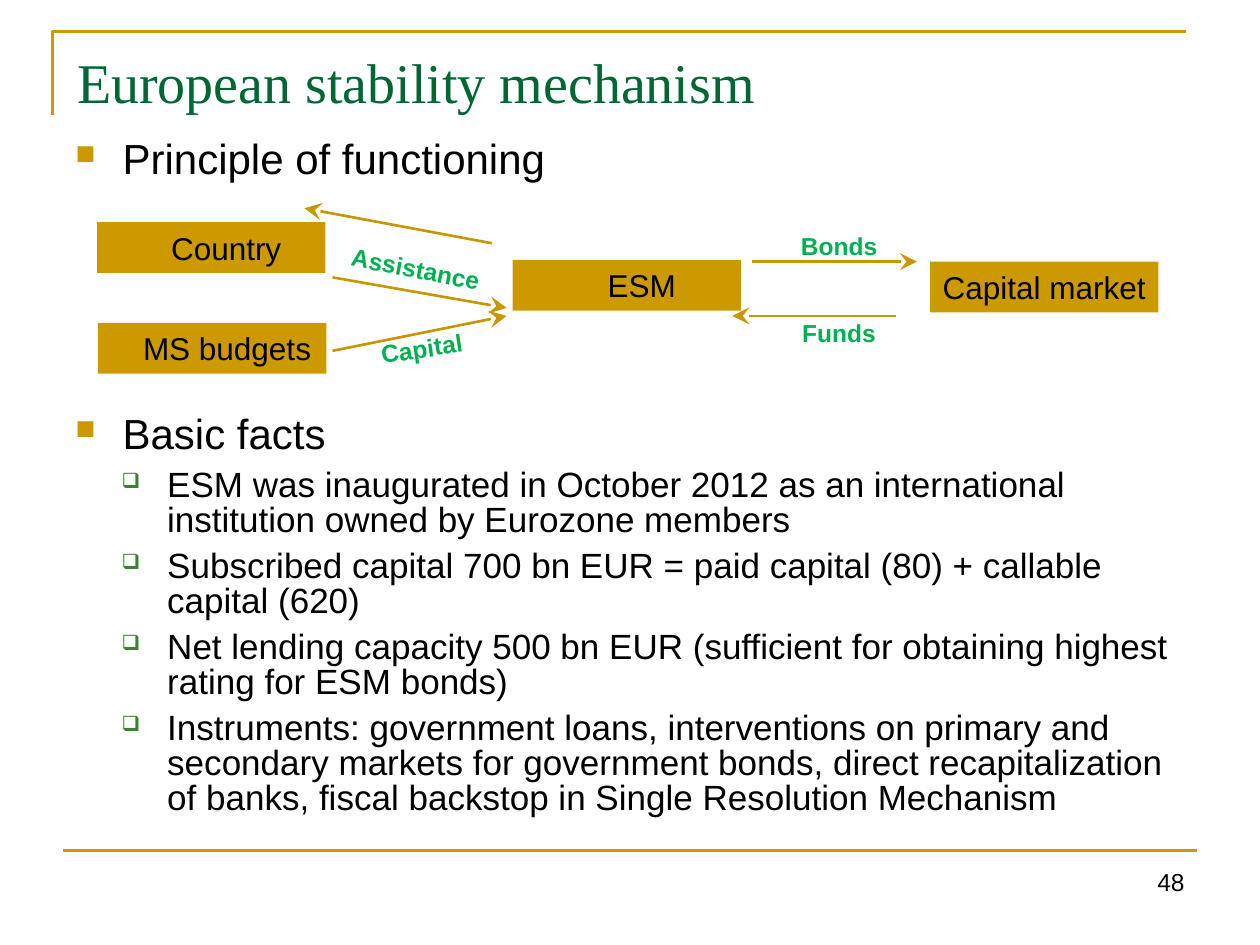
import pptx
import pptx.dml.color
import pptx.enum.shapes
import pptx.enum.text
import pptx.util
from lxml import etree
from pptx.oxml.ns import qn

Pt = pptx.util.Pt
ALIGN = pptx.enum.text.PP_ALIGN
ANCHOR = pptx.enum.text.MSO_ANCHOR
GOLD, ARROW_GOLD, LABEL_GREEN = "CC9900", "C89600", "00B050"
POINTS = (
    "ESM was inaugurated in October 2012 as an international institution owned by Eurozone members",
    "Subscribed capital 700 bn EUR = paid capital (80) + callable capital (620)",
    "Net lending capacity 500 bn EUR (sufficient for obtaining highest rating for ESM bonds)",
    "Instruments: government loans, interventions on primary and secondary markets for "
    "government bonds, direct recapitalization of banks, fiscal backstop in Single Resolution Mechanism",
)


def color(value):
    """Return the colour for a hex string."""
    return pptx.dml.color.RGBColor.from_string(value)


def write(paragraph, text, size, ink="000000", align=ALIGN.LEFT, face="Arial", bold=False):
    """Put formatted text into a paragraph."""
    paragraph.text = text
    paragraph.alignment = align
    font = paragraph.font
    font.name, font.size, font.bold = face, Pt(size), bold
    font.color.rgb = color(ink)


def add_text(slide, box, text, size, anchor=ANCHOR.TOP, **style):
    """Add a wrapped text box with one paragraph."""
    shape = slide.shapes.add_textbox(*map(Pt, box))
    shape.text_frame.word_wrap = True
    shape.text_frame.vertical_anchor = anchor
    write(shape.text_frame.paragraphs[0], text, size, **style)
    return shape


def add_line(slide, start, end, ink, arrow=False):
    """Add a straight line, with a stealth head at its end on request."""
    connector = slide.shapes.add_connector(
        pptx.enum.shapes.MSO_CONNECTOR.STRAIGHT, *map(Pt, (*start, *end)))
    connector.line.color.rgb = color(ink)
    connector.line.width = Pt(1.5)
    properties = connector._element.spPr
    if arrow:
        etree.SubElement(properties.find(qn("a:ln")), qn("a:tailEnd"), type="stealth", w="lg", len="lg")
    etree.SubElement(properties, qn("a:effectLst"))


def add_bullet(paragraph, left, hanging, character, ink, percent):
    """Give a paragraph a hanging bullet."""
    properties = paragraph._p.get_or_add_pPr()
    properties.set("marL", str(Pt(left)))
    properties.set("indent", str(-Pt(hanging)))
    holder = etree.Element(qn("a:buClr"))
    etree.SubElement(holder, qn("a:srgbClr"), val=ink)
    size = etree.Element(qn("a:buSzPct"), val=str(percent * 1000))
    mark = etree.Element(qn("a:buChar"), char=character)
    position = list(properties).index(properties.find(qn("a:defRPr")))
    for offset, element in enumerate((holder, size, mark)):
        properties.insert(position + offset, element)


def add_frame(slide, left, top, width, height):
    """Draw the corner rule, the footer rule and the slide number."""
    builder = slide.shapes.build_freeform(Pt(left), Pt(top + 48))
    builder.add_line_segments([(Pt(left), Pt(top)), (Pt(left + width), Pt(top))], close=False)
    corner = builder.convert_to_shape()
    corner.shadow.inherit = False
    corner.fill.background()
    corner.line.color.rgb = color(GOLD)
    corner.line.width = Pt(1.5)
    bottom = top + height
    add_line(slide, (left + 6, bottom), (left + 6 + width, bottom), GOLD)
    add_text(slide, (left + 486, bottom + 6, 168, 37), "48", 14, align=ALIGN.RIGHT)


def add_body(slide, left, top, width, height):
    """Write the two headings and the list of facts."""
    frame = slide.shapes.add_textbox(*map(Pt, (left, top, width, height))).text_frame
    frame.word_wrap = True
    rows = [("Principle of functioning", 0, 6), ("Basic facts", 0, 133)]
    rows += [(point, 1, 6) for point in POINTS]
    for index, (text, level, gap) in enumerate(rows):
        paragraph = frame.add_paragraph() if index else frame.paragraphs[0]
        paragraph.level = level
        paragraph.line_spacing = 0.84
        paragraph.space_before = Pt(gap)
        write(paragraph, text, 20 if level else 24)
        if level:
            add_bullet(paragraph, 52.5, 26, "❑", "3B812F", 60)
        else:
            add_bullet(paragraph, 27, 27, "■", GOLD, 65)


def add_diagram(slide, left, top):
    """Draw the flows between budgets, country, ESM and capital market."""
    for x, y, text, inset in ((0, 8, "Country", 17), (0.5, 65.5, "MS budgets", 17),
                              (237.5, 29.5, "ESM", 17), (476, 30.5, "Capital market", 0)):
        shape = slide.shapes.add_shape(
            pptx.enum.shapes.MSO_SHAPE.RECTANGLE, *map(Pt, (left + x, top + y, 130.5, 29)))
        shape.shadow.inherit = False
        shape.fill.solid()
        shape.fill.fore_color.rgb = color(GOLD)
        shape.line.fill.background()
        frame = shape.text_frame
        frame.word_wrap = False
        frame.margin_left, frame.margin_right = Pt(inset), 0
        frame.vertical_anchor = ANCHOR.MIDDLE
        write(frame.paragraphs[0], text, 18, align=ALIGN.CENTER)
    for x1, y1, x2, y2 in ((225.5, 20, 118.5, 0), (134.5, 39.5, 234, 57), (134.5, 81.5, 234, 61.5),
                           (374.5, 30.5, 468.5, 30.5), (456.5, 61.5, 363, 61.5)):
        add_line(slide, (left + x1, top + y1), (left + x2, top + y2), ARROW_GOLD, arrow=True)
    for x, y, width, text, angle in ((137, 22.5, 90, "Assistance", 11.1), (147, 68, 77, "Capital", -8.5),
                                     (385.5, 9.5, 77, "Bonds", 0), (385.5, 59, 77, "Funds", 0)):
        label = add_text(slide, (left + x, top + y, width, 24.5), text, 14,
                         ink=LABEL_GREEN, align=ALIGN.CENTER, bold=True)
        label.rotation = angle


def main():
    """Build and save the slide."""
    presentation = pptx.Presentation()
    presentation.slide_width, presentation.slide_height = Pt(720), Pt(540)
    slide = presentation.slides.add_slide(presentation.slide_layouts[6])
    add_frame(slide, 30, 18, 648, 468)
    add_text(slide, (37, 21, 648, 51), "European stability mechanism", 32,
             anchor=ANCHOR.MIDDLE, ink="006633", face="Times New Roman")
    add_body(slide, 36, 77, 648, 436)
    add_diagram(slide, 55.5, 119)
    presentation.save("out.pptx")


if __name__ == "__main__":
    main()
